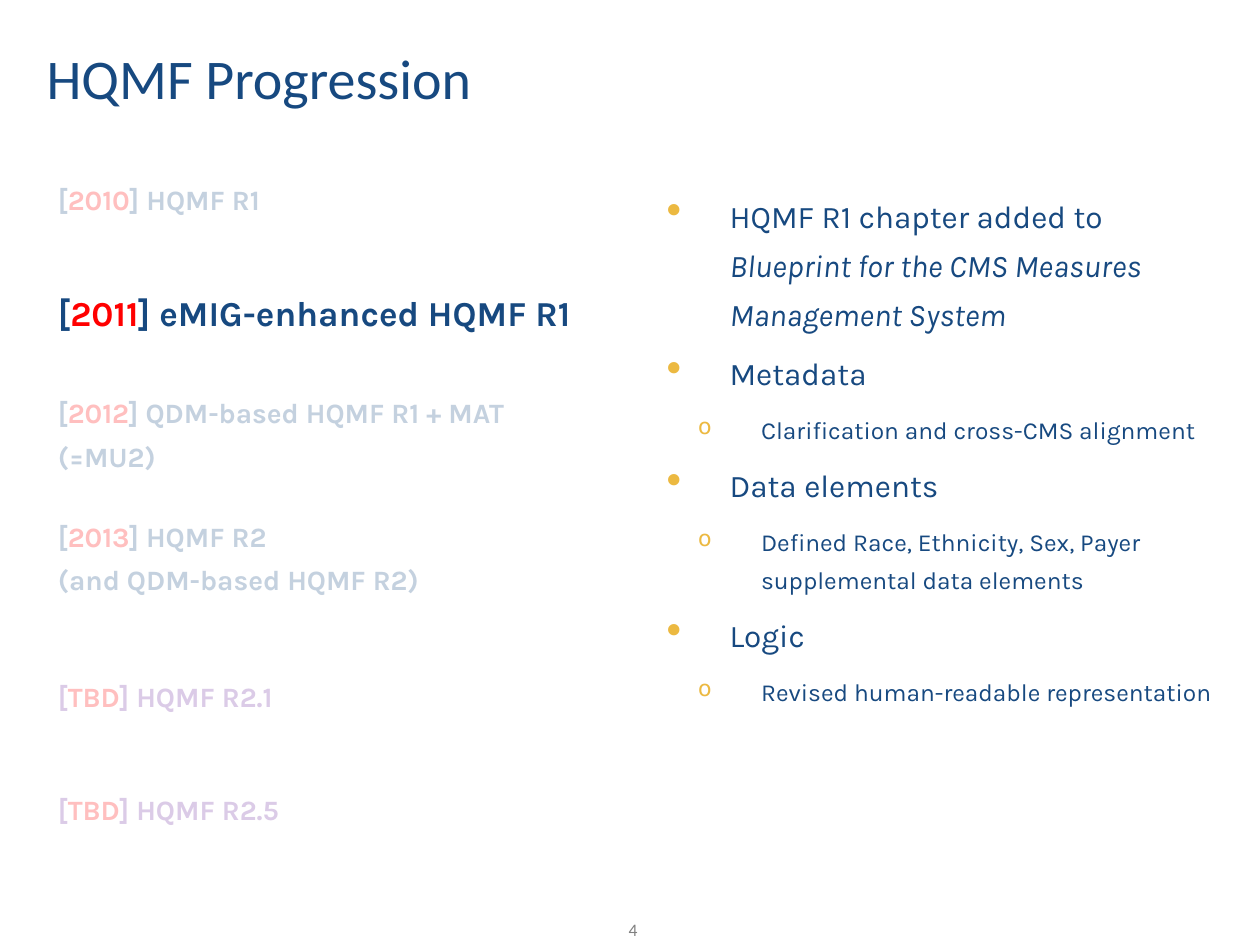
from copy import deepcopy
from lxml import etree
from pptx import Presentation
from pptx.dml.color import RGBColor
from pptx.enum.shapes import MSO_SHAPE
from pptx.enum.text import MSO_ANCHOR, PP_ALIGN
from pptx.oxml.ns import qn
from pptx.util import Inches, Pt

RECT = MSO_SHAPE.RECTANGLE
MIDDLE = MSO_ANCHOR.MIDDLE
CENTER = PP_ALIGN.CENTER

THEME = {
    "heading": "Calibri", "body": "Karla",
    "navy": "174980", "red": "FF0000", "purple": "7030A0",
    "gold": "ECB941", "gray": "808080", "white": "FFFFFF",
    "title": 32, "current": 20, "point": 18, "step": 16, "detail": 14, "number": 10,
}


def add_box(left, top, width, height, **formats):
    tf = s.shapes.add_textbox(Inches(left), Inches(top), Inches(width), Inches(height)).text_frame
    settings = {"word_wrap": True, **formats}
    for side in ("left", "top", "right", "bottom"):
        settings["margin_" + side] = Inches(0.04)
    for name, value in settings.items():
        setattr(tf, name, value)
    return tf


def add_run(p, text, size, color, font="body", **formats):
    r = p.add_run()
    r.text = text
    settings = {"name": THEME[font], "size": Pt(THEME[size]), **formats}
    for name, value in settings.items():
        setattr(r.font, name, value)
    r.font.color.rgb = RGBColor.from_string(THEME[color])
    return r


prs = Presentation()
prs.slide_width, prs.slide_height = Inches(10), Inches(7.5)
s = prs.slides.add_slide(prs.slide_layouts[6])

p = add_box(4.84, 7.25, 0.37, 0.27, word_wrap=False).paragraphs[0]
p.alignment = CENTER
add_run(p, "4", "number", "gray", "heading")

p = add_box(0.33, 0.08, 9.34, 1.13, vertical_anchor=MIDDLE).paragraphs[0]
p.line_spacing = 0.9
add_run(p, "HQMF Progression", "title", "navy", "heading")

steps = [
    (1.33, "2010", ["HQMF R1"], "step", "navy"),
    (2.17, "2011", ["eMIG-enhanced HQMF R1"], "current", "navy"),
    (3.02, "2012", ["QDM-based HQMF R1 + MAT", "(=MU2)"], "step", "navy"),
    (4, "2013", ["HQMF R2", "(and QDM-based HQMF R2)"], "step", "navy"),
    (5.27, "TBD", ["HQMF R2.1"], "step", "purple"),
    (6.17, "TBD", ["HQMF R2.5"], "step", "purple"),
]
for top, year, lines, size, color in steps:
    p = add_box(0.17, top, 5.5, 0.42).paragraphs[0]
    p.line_spacing = 1.3
    p._p.get_or_add_pPr().set("marL", str(Inches(0.25)))
    add_run(p, "[", size, color, bold=True)
    add_run(p, year, size, "red", bold=True)
    r = add_run(p, "] " + lines[0], size, color, bold=True)
    for line in lines[1:]:
        p.add_line_break()
        p._p[-1].append(deepcopy(r._r.rPr))
        add_run(p, line, size, color, bold=True)

levels = [
    {"size": "point", "left": 0.75, "before": 6, "bullet": "•", "scale": 138},
    {"size": "detail", "left": 1, "before": 8, "bullet": "o", "scale": 90},
]
points = [
    (0, "HQMF R1 chapter added to ", "Blueprint for the CMS Measures Management System"),
    (0, "Metadata", ""),
    (1, "Clarification and cross-CMS alignment", ""),
    (0, "Data elements", ""),
    (1, "Defined Race, Ethnicity, Sex, Payer supplemental data elements", ""),
    (0, "Logic", ""),
    (1, "Revised human-readable representation", ""),
]
tf = add_box(5, 1.43, 4.67, 5.21)
for i, (depth, text, emphasis) in enumerate(points):
    level = levels[depth]
    p = tf.add_paragraph() if i else tf.paragraphs[0]
    p.level = depth
    p.line_spacing = 1.3
    if i:
        p.space_before = Pt(level["before"])
    pPr = p._p.get_or_add_pPr()
    pPr.set("marL", str(Inches(level["left"])))
    pPr.set("indent", str(Inches(-0.5)))
    buClr = etree.SubElement(pPr, qn("a:buClr"))
    etree.SubElement(buClr, qn("a:srgbClr"), val=THEME["gold"])
    etree.SubElement(pPr, qn("a:buSzPct"), val=str(level["scale"] * 1000))
    etree.SubElement(pPr, qn("a:buChar"), char=level["bullet"])
    add_run(p, text, level["size"], "navy")
    if emphasis:
        add_run(p, emphasis, level["size"], "navy", italic=True)

for top, height in [(2.92, 3.75), (1.35, 0.65)]:
    veil = s.shapes.add_shape(RECT, Inches(0.17), Inches(top), Inches(4), Inches(height))
    veil.shadow.inherit = False
    veil.line.fill.background()
    veil.fill.solid()
    veil.fill.fore_color.rgb = RGBColor.from_string(THEME["white"])
    color = veil._element.spPr.find(qn("a:solidFill"))[0]
    etree.SubElement(color, qn("a:alpha"), val="75000")

prs.save("out.pptx")
